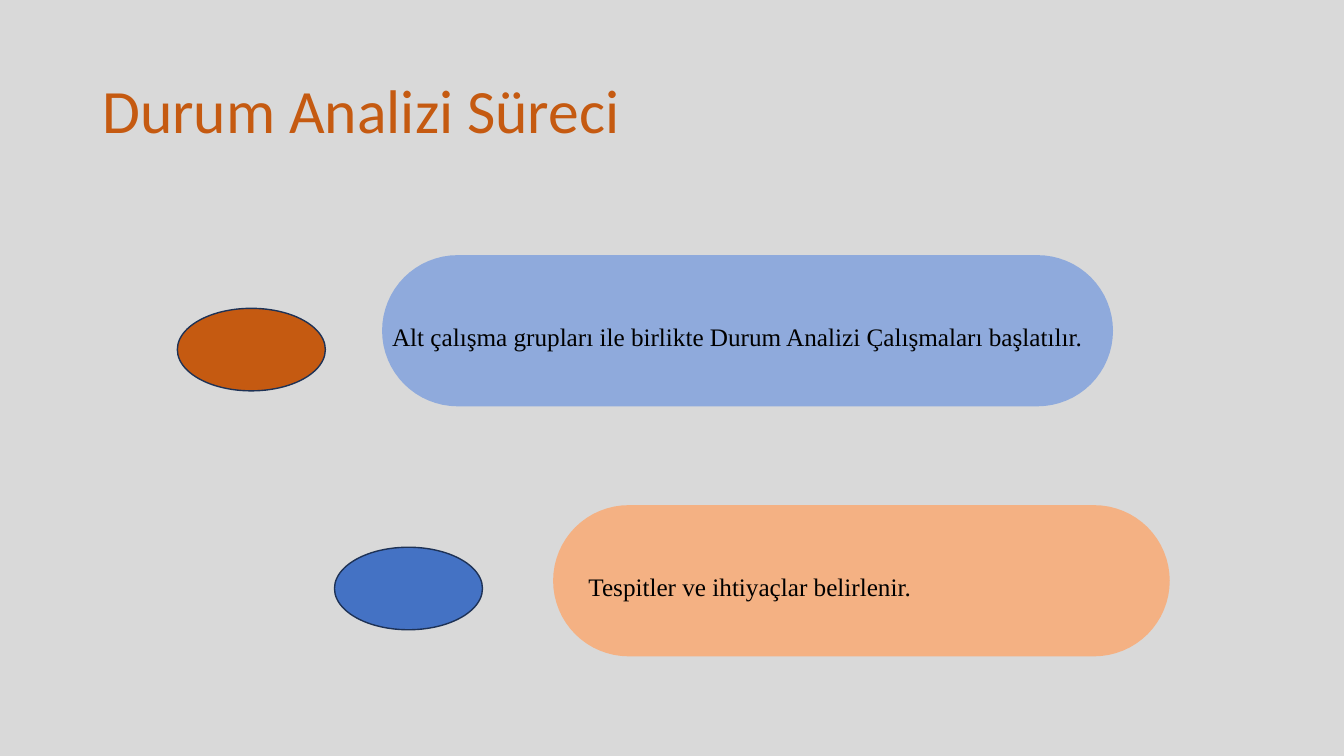
"""Build the slide on the steps of the situation analysis process."""
from dataclasses import dataclass
from math import cos, pi, sin

from pptx import Presentation
from pptx.dml.color import RGBColor
from pptx.enum.shapes import MSO_SHAPE
from pptx.enum.text import MSO_ANCHOR, PP_ALIGN
from pptx.util import Cm, Pt

ELLIPSE = MSO_SHAPE.OVAL
TOP, MIDDLE = MSO_ANCHOR.TOP, MSO_ANCHOR.MIDDLE
LEFT = PP_ALIGN.LEFT

PILL_HEIGHT = 3.81
MARKER_WIDTH, MARKER_HEIGHT = 3.73, 2.08
ARC_STEPS = 32


@dataclass(frozen=True)
class Step:
    text: str
    left: float
    top: float
    width: float
    indent: float
    pill_color: str
    marker_left: float
    marker_top: float
    marker_color: str


STEPS = (
    Step("Alt çalışma grupları ile birlikte Durum Analizi Çalışmaları başlatılır.",
         9.63, 6.43, 18.42, 0.25, "8FAADC", 4.47, 7.77, "C55A11"),
    Step("Tespitler ve ihtiyaçlar belirlenir.",
         13.94, 12.73, 15.54, 0.89, "F4B183", 8.43, 13.79, "4472C4"),
)


def color(value: str) -> RGBColor:
    return RGBColor.from_string(value)


def write(box, text: str, font_name: str, size: float, font_color: str, anchor):
    frame = box.text_frame
    frame.word_wrap = True
    frame.vertical_anchor = anchor
    para = frame.paragraphs[0]
    para.text = text
    para.alignment = LEFT
    para.font.name = font_name
    para.font.size = Pt(size)
    para.font.color.rgb = color(font_color)
    return frame


def add_title(page, text: str) -> None:
    box = page.shapes.add_textbox(Cm(2.33), Cm(1.01), Cm(29.21), Cm(3.68))
    frame = write(box, text, "Calibri", 44, "C55A11", MIDDLE)
    frame.paragraphs[0].line_spacing = 0.9


def add_pill(page, step: Step) -> None:
    radius = PILL_HEIGHT / 2
    middle = step.top + radius
    outline = []
    for center, start in ((step.left + radius, pi / 2),
                          (step.left + step.width - radius, 3 * pi / 2)):
        for index in range(ARC_STEPS + 1):
            angle = start + pi * index / ARC_STEPS
            outline.append((Cm(center + radius * cos(angle)),
                            Cm(middle + radius * sin(angle))))
    builder = page.shapes.build_freeform(*outline[0])
    builder.add_line_segments(outline[1:], close=True)
    pill = builder.convert_to_shape()
    pill.shadow.inherit = False
    pill.fill.solid()
    pill.fill.fore_color.rgb = color(step.pill_color)
    pill.line.fill.background()
    frame = write(pill, step.text, "Times New Roman", 18, "000000", TOP)
    frame.margin_left = Cm(step.indent)
    frame.margin_top = Cm(1.67)


def add_marker(page, step: Step) -> None:
    marker = page.shapes.add_shape(
        ELLIPSE, Cm(step.marker_left), Cm(step.marker_top),
        Cm(MARKER_WIDTH), Cm(MARKER_HEIGHT))
    marker.shadow.inherit = False
    marker.fill.solid()
    marker.fill.fore_color.rgb = color(step.marker_color)
    marker.line.color.rgb = color("1E3256")
    marker.line.width = Pt(1)


def main() -> None:
    deck = Presentation()
    deck.slide_width, deck.slide_height = Cm(33.87), Cm(19.05)
    page = deck.slides.add_slide(deck.slide_layouts[6])
    page.background.fill.solid()
    page.background.fill.fore_color.rgb = color("D9D9D9")
    add_title(page, "Durum Analizi Süreci")
    for step in STEPS:
        add_pill(page, step)
        add_marker(page, step)
    deck.save("out.pptx")


if __name__ == "__main__":
    main()
